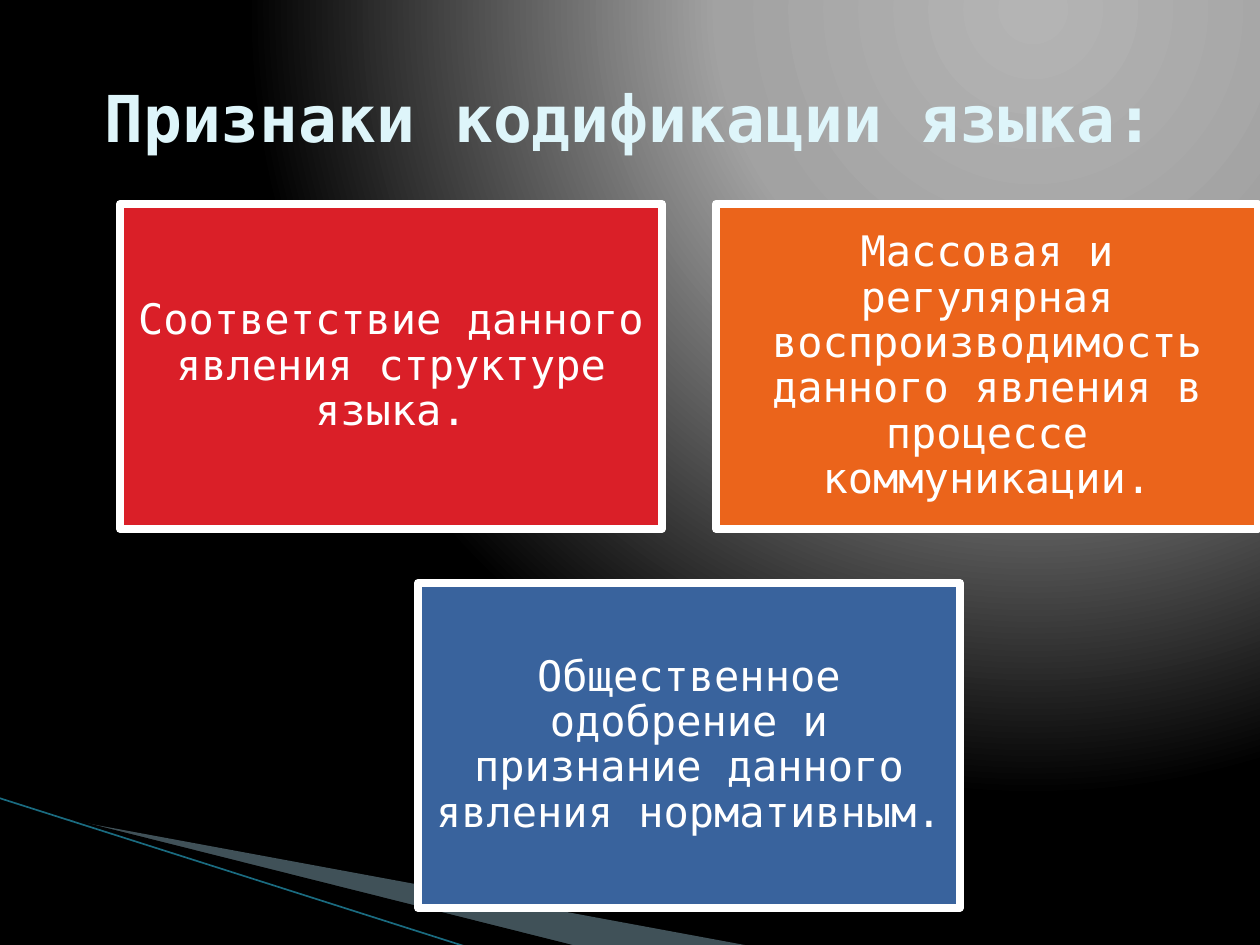
from lxml.etree import SubElement
from pptx import Presentation
from pptx.dml.color import RGBColor
from pptx.enum.shapes import MSO_CONNECTOR, MSO_SHAPE
from pptx.enum.text import MSO_ANCHOR, PP_ALIGN
from pptx.oxml import parse_xml
from pptx.oxml.ns import nsdecls, qn
from pptx.util import Pt

# Content
TITLE = "Признаки кодификации языка:"
FEATURES = [
    ("Соответствие данного явления структуре языка.", "DA1F28"),
    ("Массовая и регулярная воспроизводимость данного явления в процессе коммуникации.", "EB641B"),
    ("Общественное одобрение и признание данного явления нормативным.", "39639D"),
]
# Outline, fill, opacity in percent
WEDGES = [
    ([(69, 820), (750, 946), (575, 946), (69, 819)], "A0CBDC", 40),
    ([(67, 818), (576, 946), (469, 947), (68, 819)], "000000", 100),
]
ACCENT_LINE = (-1, 798, 467, 947)
GRADIENT = [(0, "B4B4B4"), (40, "A2A2A2"), (100, "000000")]
FONT = "DejaVu Sans Mono"

# Layout in px
SCALE = 914400 / 126
SLIDE_WIDTH, SLIDE_HEIGHT = 1260, 945
TITLE_BOX = (63, 38, 1134, 157)
GRID_LEFT, GRID_TOP = 120, 204
BOX_WIDTH, BOX_HEIGHT, GAP = 542, 325, 54
COLUMNS = 2
INSET = 12


def px(*values):
    return [round(value * SCALE) for value in values]


def color(hex_string):
    return RGBColor.from_string(hex_string)


def set_text(text_frame, text, size, hex_string, bold=False):
    text_frame.text = text
    text_frame.word_wrap = True
    text_frame.vertical_anchor = MSO_ANCHOR.MIDDLE
    paragraph = text_frame.paragraphs[0]
    paragraph.alignment = PP_ALIGN.CENTER
    font = paragraph.runs[0].font
    font.name, font.size, font.bold = FONT, Pt(size), bold
    font.color.rgb = color(hex_string)
    return paragraph


def set_background(slide):
    stops = "".join(
        f'<a:gs pos="{position * 1000}"><a:srgbClr val="{value}"/></a:gs>'
        for position, value in GRADIENT
    )
    slide.element.cSld.insert(0, parse_xml(
        f'<p:bg {nsdecls("p", "a")}><p:bgPr><a:gradFill rotWithShape="1">'
        f'<a:gsLst>{stops}</a:gsLst><a:path path="circle">'
        '<a:fillToRect l="65000" t="0" r="0" b="98000"/></a:path>'
        '</a:gradFill><a:effectLst/></p:bgPr></p:bg>'
    ))


def add_wedge(slide, points, fill, opacity):
    builder = slide.shapes.build_freeform(*points[0], scale=SCALE)
    builder.add_line_segments(points[1:], close=True)
    shape = builder.convert_to_shape()
    shape.shadow.inherit = False
    shape.fill.solid()
    shape.fill.fore_color.rgb = color(fill)
    shape.line.fill.background()
    if opacity < 100:
        fill_color = shape.element.spPr.find(".//" + qn("a:srgbClr"))
        SubElement(fill_color, qn("a:alpha"), val=str(opacity * 1000))


def add_feature(slide, left, top, text, fill):
    shape = slide.shapes.add_shape(
        MSO_SHAPE.RECTANGLE, *px(left, top, BOX_WIDTH, BOX_HEIGHT))
    shape.shadow.inherit = False
    shape.fill.solid()
    shape.fill.fore_color.rgb = color(fill)
    shape.line.color.rgb = color("FFFFFF")
    shape.line.width = Pt(4.33)
    frame = shape.text_frame
    frame.margin_left, frame.margin_top, frame.margin_right, frame.margin_bottom = px(*[INSET] * 4)
    set_text(frame, text, 24, "FFFFFF").line_spacing = 0.9


def main():
    presentation = Presentation()
    presentation.slide_width, presentation.slide_height = px(SLIDE_WIDTH, SLIDE_HEIGHT)
    slide = presentation.slides.add_slide(presentation.slide_layouts[5])
    set_background(slide)

    # Corner decoration
    for wedge in WEDGES:
        add_wedge(slide, *wedge)
    line = slide.shapes.add_connector(MSO_CONNECTOR.STRAIGHT, *px(*ACCENT_LINE))
    line.line.color.rgb = color("1A6B80")
    line.line.width = Pt(0.95)
    SubElement(line.element.spPr, qn("a:effectLst"))

    # Title
    title = slide.shapes.title
    title.left, title.top, title.width, title.height = px(*TITLE_BOX)
    set_text(title.text_frame, TITLE, 36.9, "DEF5FA", bold=True)

    # Feature boxes: rows of two, a shorter last row is centred
    for index, (text, fill) in enumerate(FEATURES):
        row, column = divmod(index, COLUMNS)
        missing = max(0, COLUMNS * (row + 1) - len(FEATURES))
        left = GRID_LEFT + (column + missing / 2) * (BOX_WIDTH + GAP)
        top = GRID_TOP + row * (BOX_HEIGHT + GAP)
        add_feature(slide, left, top, text, fill)

    presentation.save("out.pptx")


if __name__ == "__main__":
    main()
